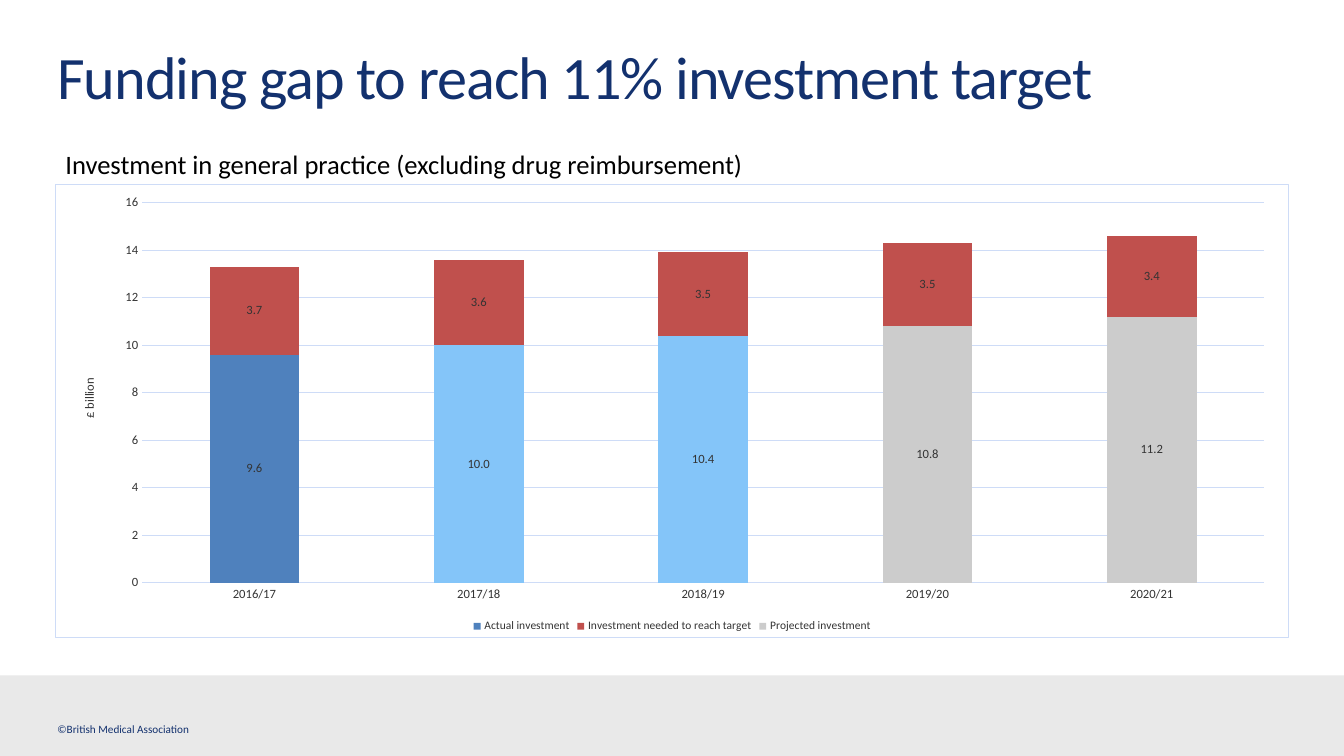
from lxml import etree
from pptx import Presentation
from pptx.chart.data import CategoryChartData
from pptx.dml.color import RGBColor
from pptx.enum.chart import XL_CHART_TYPE, XL_LABEL_POSITION, XL_LEGEND_POSITION, XL_TICK_MARK
from pptx.enum.shapes import MSO_SHAPE
from pptx.enum.text import MSO_ANCHOR
from pptx.oxml import parse_xml
from pptx.oxml.ns import nsdecls, qn
from pptx.util import Pt

FONT, NAVY, GREY, RULE = "Calibri", "13316E", "333333", "CEDCF7"
PAGE_WIDTH, PAGE_HEIGHT, FOOTER_HEIGHT = 960, 540, 57.6
YEARS = ["2016/17", "2017/18", "2018/19", "2019/20", "2020/21"]
SERIES = [
    ("Actual investment", "4F81BD", (9.6, 10, 10.4, 10.8, 11.2)),
    ("Investment needed to reach target", "C0504D", (3.7, 3.6, 3.5, 3.5, 3.4)),
    ("Projected investment", "CCCCCC", (0, None, None, None, None)),
]
POINT_COLOURS = {1: "84C5F9", 2: "84C5F9", 3: "CCCCCC", 4: "CCCCCC"}
CHART_AREA = (39.6, 131.4, 881.3, 324)
PLOT_LAYOUT = {"x": 0.07, "y": 0.04, "w": 0.91, "h": 0.84}
TEXTS = [
    {"text": "©British Medical Association", "area": (41, 516.2, 199.4, 9.6),
     "size": 8, "colour": NAVY, "anchor": MSO_ANCHOR.MIDDLE},
    {"text": "Funding gap to reach 11% investment target", "area": (41, 34.6, 751, 51.8),
     "size": 43, "colour": NAVY, "leading": 45.3, "tracking": -70},
    {"text": "Investment in general practice (excluding drug reimbursement)",
     "area": (39.6, 102.2, 539.3, 30.2), "size": 19, "colour": "000000", "inset": (7.2, 3.6)},
]


def colour(value):
    return RGBColor.from_string(value)


def paint(fill, value):
    fill.solid()
    fill.fore_color.rgb = colour(value)


def style(font, size, value):
    for name, setting in {"name": FONT, "size": Pt(size), "bold": False}.items():
        setattr(font, name, setting)
    font.color.rgb = colour(value)


def add_text(page, text, area, size, colour, anchor=MSO_ANCHOR.TOP,
             leading=None, tracking=None, inset=(0, 0)):
    frame = page.shapes.add_textbox(*map(Pt, area)).text_frame
    across, down = map(Pt, inset)
    settings = {"word_wrap": True, "vertical_anchor": anchor, "margin_left": across,
                "margin_right": across, "margin_top": down, "margin_bottom": down}
    for name, setting in settings.items():
        setattr(frame, name, setting)
    para = frame.paragraphs[0]
    if leading:
        para.line_spacing = Pt(leading)
    span = para.add_run()
    span.text = text
    style(span.font, size, colour)
    if tracking:
        span.font._element.set("spc", str(tracking))


def place_plot(chart):
    plot_area = chart._chartSpace.chart.plotArea
    for old in plot_area.findall(qn("c:layout")):
        plot_area.remove(old)
    layout = etree.Element(qn("c:layout"))
    manual = etree.SubElement(layout, qn("c:manualLayout"))
    modes = {"layoutTarget": "inner", "xMode": "edge", "yMode": "edge"}
    for name, value in {**modes, **PLOT_LAYOUT}.items():
        etree.SubElement(manual, qn("c:" + name)).set("val", str(value))
    plot_area.insert(0, layout)


def frame_chart(chart):
    chart._chartSpace.chart.addnext(parse_xml(
        f'<c:spPr {nsdecls("c", "a")}><a:solidFill><a:srgbClr val="FFFFFF"/></a:solidFill>'
        f'<a:ln w="{Pt(0.75)}"><a:solidFill><a:srgbClr val="{RULE}"/></a:solidFill></a:ln></c:spPr>'))


def style_axes(chart):
    value_axis, category_axis = chart.value_axis, chart.category_axis
    for axis in (value_axis, category_axis):
        axis.major_tick_mark = axis.minor_tick_mark = XL_TICK_MARK.NONE
        style(axis.tick_labels.font, 9, GREY)
    for name, setting in {"minimum_scale": 0, "maximum_scale": 16, "major_unit": 2}.items():
        setattr(value_axis, name, setting)
    value_axis.format.line.fill.background()
    for line in (category_axis.format.line, value_axis.major_gridlines.format.line):
        line.width = Pt(0.75)
        line.color.rgb = colour(RULE)
    title = value_axis.axis_title.text_frame
    title.text = "£ billion"
    style(title.paragraphs[0].runs[0].font, 9, GREY)


def style_series(plot):
    plot.gap_width, plot.overlap, plot.vary_by_categories = 150, 100, False
    for series, (_, tint, values) in zip(plot.series, SERIES):
        paint(series.format.fill, tint)
        if None in values:
            continue
        labels = series.data_labels
        settings = {"show_value": True, "position": XL_LABEL_POSITION.CENTER,
                    "number_format": "#,##0.0", "number_format_is_linked": False}
        for name, setting in settings.items():
            setattr(labels, name, setting)
        style(labels.font, 9, GREY)
    for index, tint in POINT_COLOURS.items():
        paint(plot.series[0].points[index].format.fill, tint)


def add_investment_chart(page):
    data = CategoryChartData()
    data.categories = YEARS
    for name, _, values in SERIES:
        data.add_series(name, values)
    chart = page.shapes.add_chart(
        XL_CHART_TYPE.COLUMN_STACKED, *map(Pt, CHART_AREA), data).chart
    style(chart.font, 10, "000000")
    chart.has_title = False
    chart.has_legend = True
    chart.legend.position = XL_LEGEND_POSITION.BOTTOM
    chart.legend.include_in_layout = False
    style(chart.legend.font, 8.2, GREY)
    style_axes(chart)
    style_series(chart.plots[0])
    place_plot(chart)
    frame_chart(chart)


def main():
    deck = Presentation()
    deck.slide_width, deck.slide_height = Pt(PAGE_WIDTH), Pt(PAGE_HEIGHT)
    page = deck.slides.add_slide(deck.slide_layouts[6])
    footer = page.shapes.add_shape(
        MSO_SHAPE.RECTANGLE, 0, Pt(PAGE_HEIGHT - FOOTER_HEIGHT), Pt(PAGE_WIDTH), Pt(FOOTER_HEIGHT))
    footer.shadow.inherit = False
    paint(footer.fill, "E9E9E9")
    footer.line.fill.background()
    add_investment_chart(page)
    for text in TEXTS:
        add_text(page, **text)
    deck.save("out.pptx")


if __name__ == "__main__":
    main()
